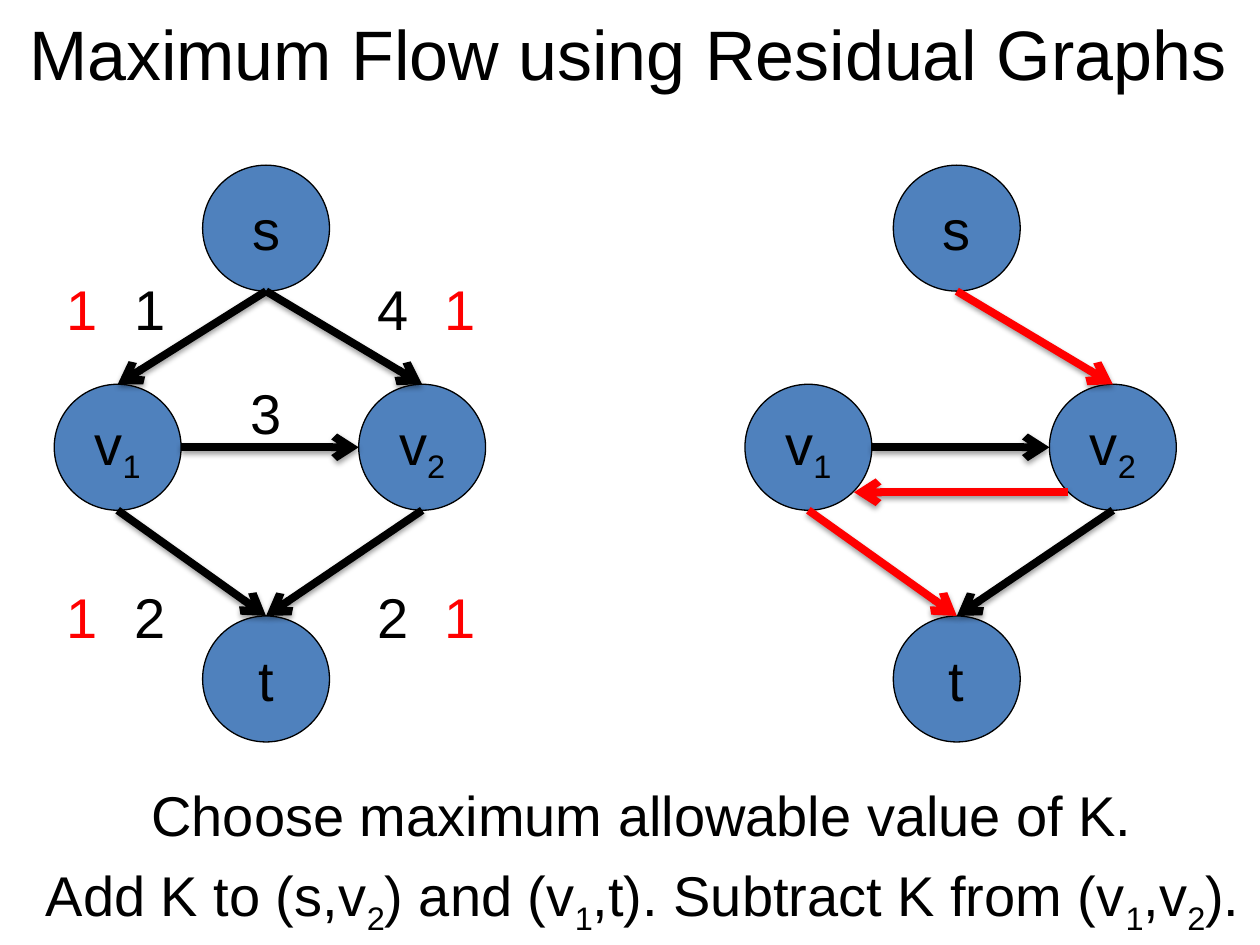
from lxml import etree
from pptx import Presentation
from pptx.dml.color import RGBColor
from pptx.enum import shapes, text
from pptx.oxml import parse_xml
from pptx.oxml.ns import nsdecls, qn
from pptx.util import Pt

BLACK, RED, BLUE = "000000", "FF0000", "4F81BD"
WIDE, HIGH = 72.5, 72
SHIFT = 394.7  # from the flow graph to the residual graph
SPOTS = {"s": (115.8, 94.4), "v_1": (31, 219.6),
         "v_2": (205, 219.6), "t": (115.8, 352)}
SHADOW = (f'<a:effectLst {nsdecls("a")}><a:outerShdw blurRad="40000" '
          'dist="20000" dir="5400000" rotWithShape="0"><a:srgbClr val="000000">'
          '<a:alpha val="38000"/></a:srgbClr></a:outerShdw></a:effectLst>')


def color(code):
    return RGBColor.from_string(code)


def write(frame, words, size=32, ink=BLACK, align=text.PP_ALIGN.CENTER):
    """Write words; the character after each underscore is a subscript."""
    para = frame.paragraphs[0]
    para.alignment = align
    first, *rest = words.split("_")
    runs = [(first, False)]
    for part in rest:
        runs += [(part[0], True), (part[1:], False)]
    for words, low in runs:
        if not words:
            continue
        run = para.add_run()
        run.text = words
        run.font.size = Pt(size)
        run.font.name = "Arial"
        run.font.color.rgb = color(ink)
        if low:
            run.font._element.set("baseline", "-25000")


def label(slide, words, left, top, width, height=46, **style):
    box = slide.shapes.add_textbox(Pt(left), Pt(top), Pt(width), Pt(height))
    frame = box.text_frame
    frame.word_wrap = False
    frame.vertical_anchor = text.MSO_ANCHOR.MIDDLE
    write(frame, words, **style)


def node(slide, name, left, top):
    oval = slide.shapes.add_shape(shapes.MSO_SHAPE.OVAL, Pt(left), Pt(top),
                                  Pt(WIDE), Pt(HIGH))
    oval.shadow.inherit = False
    oval.fill.solid()
    oval.fill.fore_color.rgb = color(BLUE)
    oval.line.color.rgb = color(BLACK)
    oval.line.width = Pt(0.75)
    oval.text_frame.word_wrap = False
    oval.text_frame.vertical_anchor = text.MSO_ANCHOR.MIDDLE
    write(oval.text_frame, name)


def arrow(slide, start, end, ink=BLACK):
    line = slide.shapes.add_connector(shapes.MSO_CONNECTOR.STRAIGHT,
                                      *map(Pt, start + end))
    line.line.color.rgb = color(ink)
    line.line.width = Pt(4.5)
    etree.SubElement(line.line._get_or_add_ln(), qn("a:tailEnd"), type="arrow")
    line._element.spPr.append(parse_xml(SHADOW))


def graph(slide, shift, edges):
    """Draw the four nodes, then edges given as (from, to, colour)."""
    spots = {name: (x + shift, y) for name, (x, y) in SPOTS.items()}
    for name, (x, y) in spots.items():
        node(slide, name, x, y)
    for tail, head, ink in edges:
        (x1, y1), (x2, y2) = spots[tail], spots[head]
        if y1 == y2:
            ends = (x1 + WIDE, y1 + HIGH / 2), (x2, y2 + HIGH / 2)
        else:
            ends = (x1 + WIDE / 2, y1 + HIGH), (x2 + WIDE / 2, y2)
        arrow(slide, *ends, ink)


def main():
    deck = Presentation()
    deck.slide_width, deck.slide_height = Pt(720), Pt(540)
    slide = deck.slides.add_slide(deck.slide_layouts[6])

    label(slide, "Maximum Flow using Residual Graphs", 3.6, 4.3, 710, 51, size=40)
    graph(slide, 0, [("s", "v_1", BLACK), ("s", "v_2", BLACK),
                     ("v_1", "v_2", BLACK), ("v_1", "t", BLACK),
                     ("v_2", "t", BLACK)])
    graph(slide, SHIFT, [("s", "v_2", RED), ("v_1", "v_2", BLACK),
                         ("v_1", "t", RED), ("v_2", "t", BLACK)])
    arrow(slide, (610.5, 281.3), (488, 281.3), RED)

    marks = [("3", 136, 212.5, BLACK)]
    for top, left, right in ((153.3, "1", "4"), (329, "2", "2")):
        marks += [("1", 30.8, top, RED), (left, 70, top, BLACK),
                  (right, 208.5, top, BLACK), ("1", 247, top, RED)]
    for words, x, y, ink in marks:
        label(slide, words, x, y, 32.4, ink=ink, align=text.PP_ALIGN.LEFT)

    label(slide, "Choose maximum allowable value of K.", 77, 442, 580)
    label(slide, "Add K to (s,v_2) and (v_1,t). Subtract K from (v_1,v_2).",
          0.7, 490.3, 733)
    deck.save("out.pptx")


if __name__ == "__main__":
    main()
